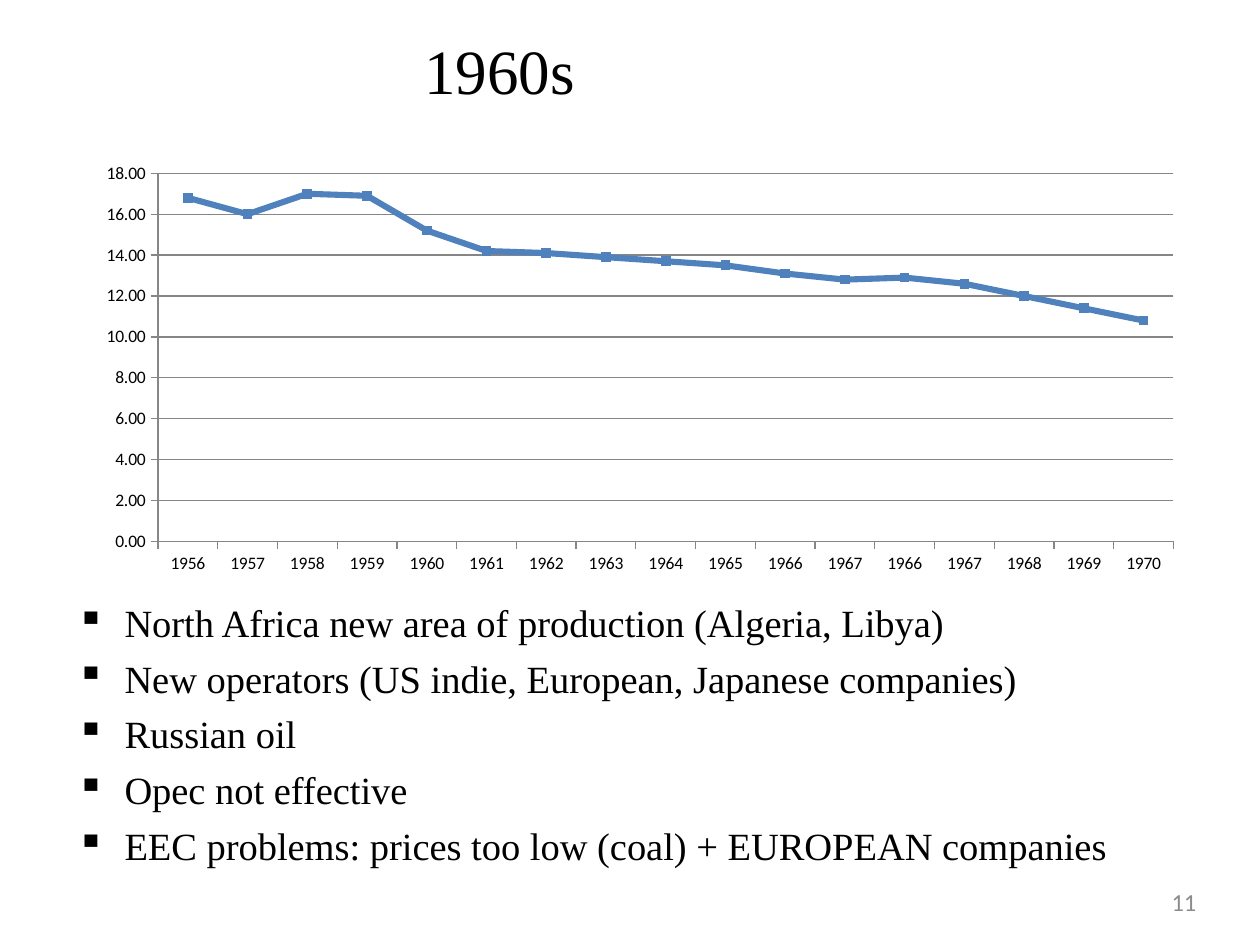
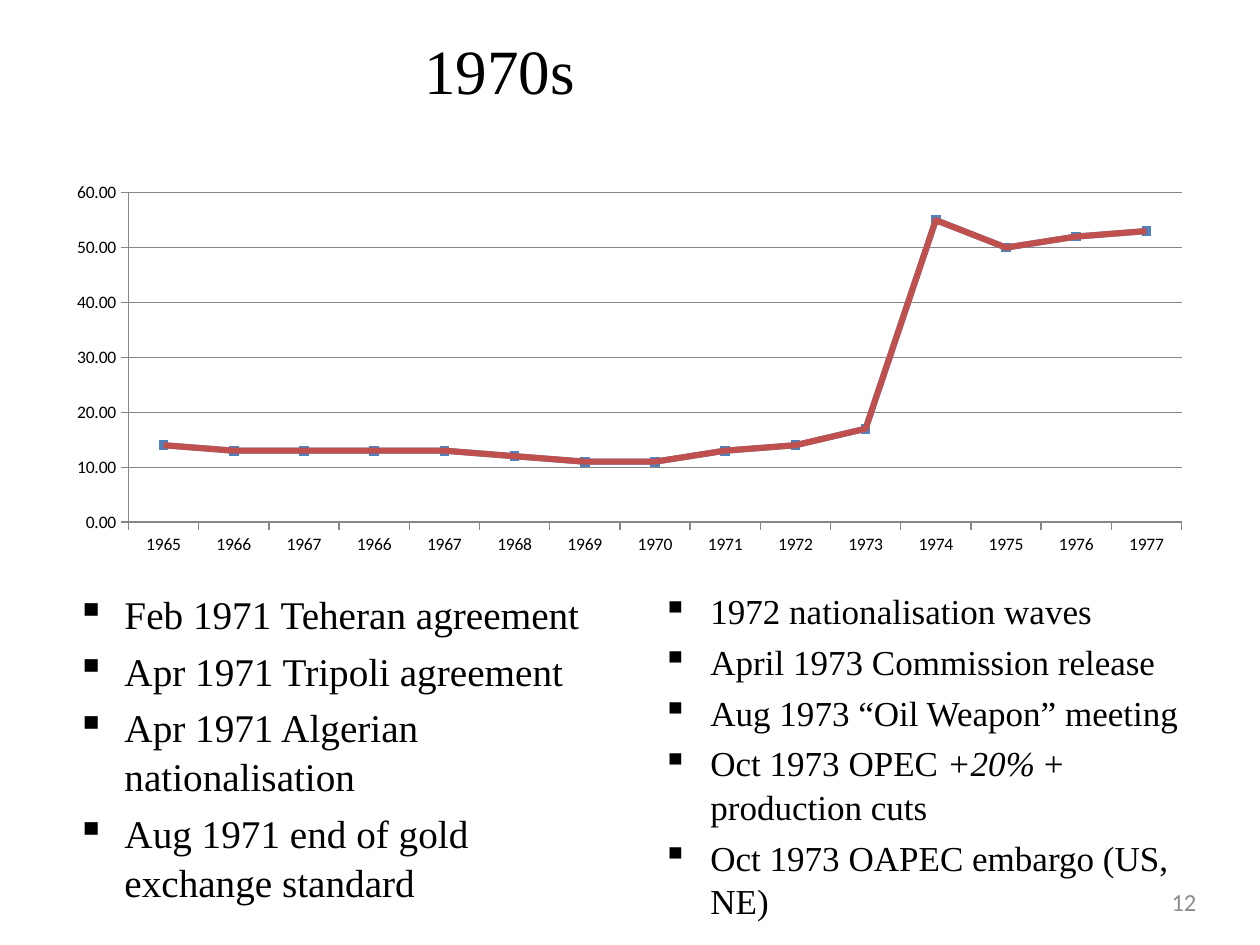
import pptx
import pptx.chart.data
import pptx.dml.color
import pptx.enum.chart
import pptx.enum.text
import pptx.util
from pptx.util import Inches
from lxml import etree

SERIF = "Times New Roman"
SANS = "Calibri"
BLACK = "000000"
GREY = "868686"
PAGE_GREY = "8C8C8C"
BLUE = "4F81BD"
RED = "C0504D"


def color(value):
    return pptx.dml.color.RGBColor.from_string(value)


def style_font(font, size, name, fill=BLACK, italic=None):
    font.size = pptx.util.Pt(size)
    font.name = name
    font.color.rgb = color(fill)
    font.italic = italic


def add_run(paragraph, text, **style):
    run = paragraph.add_run()
    run.text = text
    style_font(run.font, **style)


def add_bullet(paragraph):
    properties = paragraph._p.get_or_add_pPr()
    properties.set("marL", str(Inches(0.38)))
    properties.set("indent", str(-Inches(0.38)))
    bullet = etree.SubElement(properties, pptx.oxml.ns.qn("a:buChar"))
    bullet.set("char", "▪")


class Deck:
    def __init__(self):
        self.presentation = pptx.Presentation()
        self.presentation.slide_width = Inches(10)
        self.presentation.slide_height = Inches(7.5)
        self.slide = None

    def frame(self, left, top, width, height):
        box = self.slide.shapes.add_textbox(
            Inches(left), Inches(top), Inches(width), Inches(height))
        box.text_frame.word_wrap = True
        return box.text_frame

    def start(self, decade, number):
        blank = self.presentation.slide_layouts[6]
        self.slide = self.presentation.slides.add_slide(blank)
        title = self.frame(3.27, 0.29, 6.22, 1.18).paragraphs[0]
        title.line_spacing = pptx.util.Pt(37)
        add_run(title, decade, size=36, name=SERIF)
        page = self.frame(9.2, 6.96, 0.63, 0.4)
        page.vertical_anchor = pptx.enum.text.MSO_ANCHOR.MIDDLE
        add_run(page.paragraphs[0], str(number), size=14, name=SANS, fill=PAGE_GREY)

    def bullets(self, place, size, items):
        frame = self.frame(*place)
        for index, item in enumerate(items):
            paragraph = frame.add_paragraph() if index else frame.paragraphs[0]
            add_bullet(paragraph)
            paragraph.line_spacing = 1.04
            if index:
                paragraph.space_before = pptx.util.Pt(round(size * 0.2, 1))
            runs = [(item, None)] if isinstance(item, str) else item
            for text, italic in runs:
                add_run(paragraph, text, size=size, name=SERIF, italic=italic)

    def line_chart(self, place, kind, years, prices, series_colors, top, step):
        data = pptx.chart.data.CategoryChartData(number_format="0.00")
        data.categories = [str(year) for year in years]
        for number in range(1, len(series_colors) + 1):
            data.add_series(f"Series {number}", prices)
        chart = self.slide.shapes.add_chart(
            kind, *[Inches(length) for length in place], data).chart
        chart.has_legend = False
        chart.has_title = False
        style_font(chart.font, size=10, name=SANS)
        chart.plots[0].vary_by_categories = False
        for index, (series, fill) in enumerate(zip(chart.plots[0].series, series_colors)):
            series.smooth = False
            series.format.line.color.rgb = color(fill)
            series.format.line.width = pptx.util.Pt(3.5)
            if index:
                series.marker.style = pptx.enum.chart.XL_MARKER_STYLE.NONE
                continue
            series.marker.style = pptx.enum.chart.XL_MARKER_STYLE.SQUARE
            series.marker.size = 5
            series.marker.format.fill.solid()
            series.marker.format.fill.fore_color.rgb = color(fill)
            series.marker.format.line.color.rgb = color(fill)
        values = chart.value_axis
        values.minimum_scale, values.maximum_scale, values.major_unit = 0, top, step
        values.has_major_gridlines = True
        values.tick_labels.number_format = "0.00"
        values.tick_labels.number_format_is_linked = False
        for axis in (values, chart.category_axis):
            axis.major_tick_mark = pptx.enum.chart.XL_TICK_MARK.OUTSIDE
            axis.minor_tick_mark = pptx.enum.chart.XL_TICK_MARK.NONE
            axis.format.line.color.rgb = color(GREY)
        values.major_gridlines.format.line.color.rgb = color(GREY)


def build_sixties(deck):
    deck.start("1960s", 11)
    deck.line_chart(
        (0.67, 1.23, 8.82, 3.39),
        pptx.enum.chart.XL_CHART_TYPE.LINE_MARKERS_STACKED,
        [*range(1956, 1968), *range(1966, 1971)],
        [16.8, 16, 17, 16.9, 15.2, 14.2, 14.1, 13.9, 13.7, 13.5,
         13.1, 12.8, 12.9, 12.6, 12, 11.4, 10.8],
        [BLUE], top=18, step=2)
    deck.bullets((0.51, 4.69, 9.15, 2.52), 22, [
        "North Africa new area of production (Algeria, Libya)",
        "New operators (US indie, European, Japanese companies)",
        "Russian oil",
        "Opec not effective",
        "EEC problems: prices too low (coal) + EUROPEAN companies",
    ])


def build_seventies(deck):
    deck.start("1970s", 12)
    deck.line_chart(
        (0.43, 1.39, 9.13, 3.07),
        pptx.enum.chart.XL_CHART_TYPE.LINE_MARKERS,
        [*range(1965, 1968), *range(1966, 1978)],
        [14, 13, 13, 13, 13, 12, 11, 11, 13, 14, 17, 55, 50, 52, 53],
        [BLUE, RED], top=60, step=10)
    deck.bullets((0.51, 4.62, 4.33, 2.28), 22.4, [
        "Feb 1971 Teheran agreement",
        "Apr 1971 Tripoli agreement",
        "Apr 1971 Algerian nationalisation",
        "Aug 1971 end of gold exchange standard",
    ])
    deck.bullets((5.16, 4.62, 4.33, 2.28), 20, [
        "1972 nationalisation waves",
        "April 1973 Commission release",
        "Aug 1973 “Oil Weapon” meeting",
        [("Oct 1973 OPEC ", None), ("+20% ", True), ("+ production cuts", None)],
        "Oct 1973 OAPEC embargo (US, NE)",
    ])


def main():
    deck = Deck()
    build_sixties(deck)
    build_seventies(deck)
    deck.presentation.save("out.pptx")


if __name__ == "__main__":
    main()
